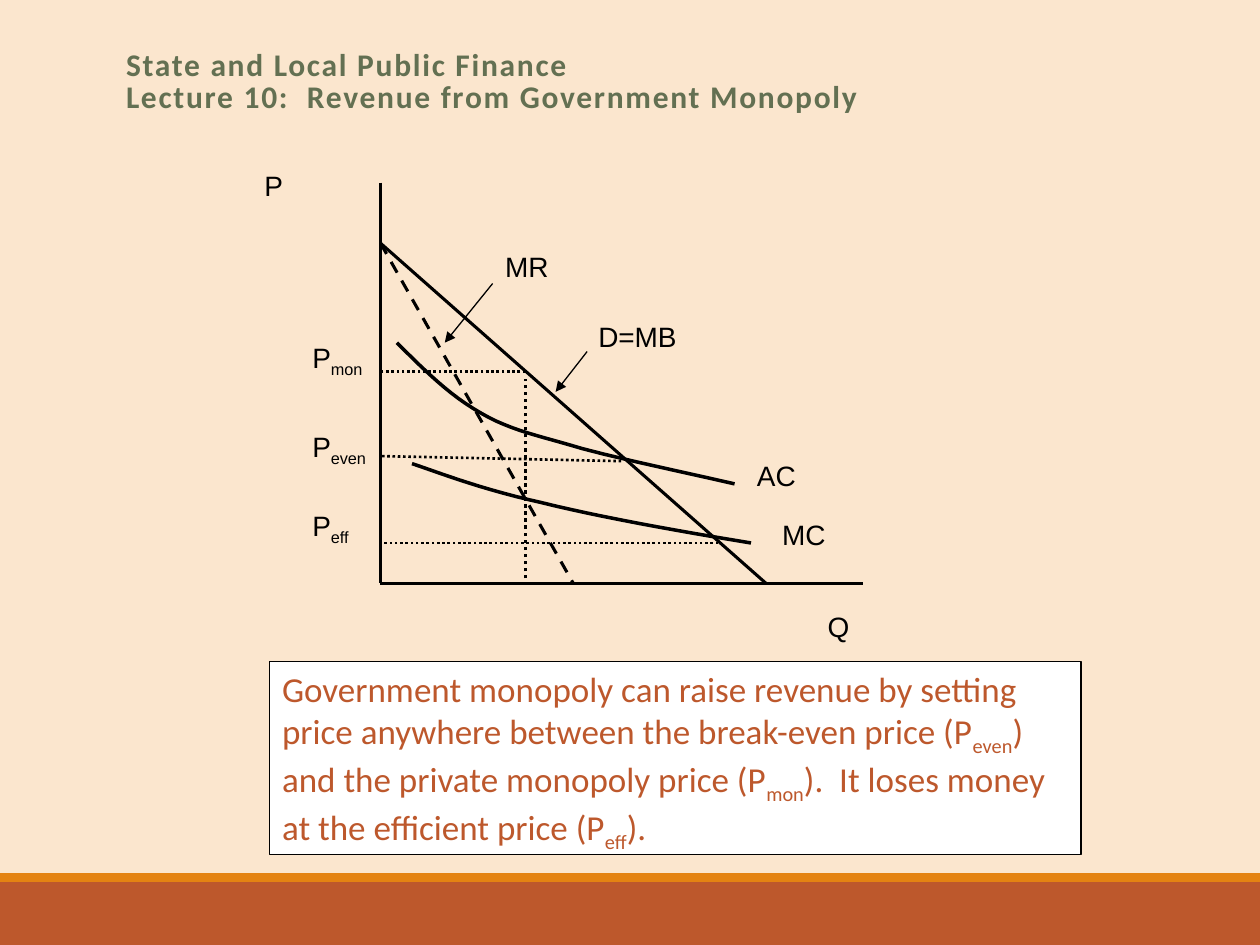
from lxml import etree
from pptx import Presentation
from pptx.dml.color import RGBColor
from pptx.enum.dml import MSO_LINE
from pptx.enum.shapes import MSO_CONNECTOR, MSO_SHAPE
from pptx.enum.text import MSO_ANCHOR, PP_ALIGN
from pptx.oxml.ns import qn
from pptx.util import Inches, Pt

STRAIGHT = MSO_CONNECTOR.STRAIGHT
RECT = MSO_SHAPE.RECTANGLE
DASH, DOT = MSO_LINE.DASH, MSO_LINE.ROUND_DOT
TOP, MIDDLE = MSO_ANCHOR.TOP, MSO_ANCHOR.MIDDLE
LEFT = PP_ALIGN.LEFT
BLACK, RUST = "000000", "BD582C"


def color(value):
    return RGBColor.from_string(value)


def add_rect(s, box, fill, line=None):
    sp = s.shapes.add_shape(RECT, *map(Inches, box))
    sp.shadow.inherit = False
    sp.fill.solid()
    sp.fill.fore_color.rgb = color(fill)
    if line:
        sp.line.color.rgb = color(line)
        sp.line.width = Pt(0.75)
    else:
        sp.line.fill.background()
    return sp


def write(sp, text, font, size, fill):
    tf = sp.text_frame
    tf.word_wrap = True
    tf.vertical_anchor = TOP
    p = tf.paragraphs[0]
    p.alignment = LEFT
    for i, part in enumerate(text.split("|")):
        if not part:
            continue
        r = p.add_run()
        r.text = part
        r.font.name = font
        r.font.size = Pt(size)
        r.font.color.rgb = color(fill)
        if i % 2:
            r._r.get_or_add_rPr().set("baseline", "-25000")


def add_line(s, start, end, width, dash=None, arrow=False):
    sp = s.shapes.add_connector(STRAIGHT, *map(Inches, start + end))
    sp.line.color.rgb = color(BLACK)
    sp.line.width = Pt(width)
    if dash:
        sp.line.dash_style = dash
    if arrow:
        etree.SubElement(sp.line._get_or_add_ln(), qn("a:tailEnd"), type="triangle")
    etree.SubElement(sp._element.spPr, qn("a:effectLst"))


def bezier(points, t):
    weights = ((1 - t) ** 3, 3 * t * (1 - t) ** 2, 3 * t * t * (1 - t), t ** 3)
    return tuple(sum(w * pt[axis] for w, pt in zip(weights, points)) for axis in (0, 1))


def add_curve(s, points, steps=12):
    route = [
        bezier(points[i:i + 4], n / steps)
        for i in range(0, len(points) - 1, 3)
        for n in range(1, steps + 1)
    ]
    builder = s.shapes.build_freeform(*map(Inches, points[0]))
    builder.add_line_segments([(Inches(x), Inches(y)) for x, y in route], close=False)
    sp = builder.convert_to_shape()
    sp.shadow.inherit = False
    sp.fill.background()
    sp.line.color.rgb = color(BLACK)
    sp.line.width = Pt(2)


def add_title(s, box, text):
    sp = s.shapes.title
    sp.left, sp.top, sp.width, sp.height = map(Inches, box)
    tf = sp.text_frame
    tf.text = text
    tf.word_wrap = True
    tf.vertical_anchor = MIDDLE
    p = tf.paragraphs[0]
    p.alignment = LEFT
    p.line_spacing = 0.85
    for r in p.runs:
        r.font.name = "Calibri"
        r.font.size = Pt(18)
        r.font.bold = True
        r.font.color.rgb = color("637052")
        r._r.get_or_add_rPr().set("spc", "100")


def add_footer_bands(s, box):
    x, y, w, h = box
    stripe = 0.07
    add_rect(s, (x, y + stripe, w, h - stripe), RUST)
    add_rect(s, (x, y, w, stripe), "E48312")


def add_monopoly_graph(s, x, y):
    def at(point):
        return x + point[0], y + point[1]

    origin, intercept = (1.02, 3.38), (1.02, 0.68)
    lines = [
        ((1.02, 0.2), origin, 2, None),
        (origin, (4.85, 3.38), 2, None),
        (intercept, (4.08, 3.38), 1.75, None),
        (intercept, (2.55, 3.38), 1.75, DASH),
        ((3.7, 3.06), (1.02, 3.06), 1.5, DOT),
        ((2.93, 2.41), (1.02, 2.37), 1.5, DOT),
        ((2.17, 1.7), (1.02, 1.7), 1.5, DOT),
        ((2.17, 3.34), (2.17, 1.76), 2, DOT),
    ]
    for start, end, width, dash in lines:
        add_line(s, at(start), at(end), width, dash)

    average_cost = [
        (1.15, 1.47), (1.36, 1.68), (1.57, 1.89), (1.82, 2.03), (2.06, 2.17),
        (2.29, 2.21), (2.62, 2.31), (2.96, 2.4), (3.39, 2.49), (3.83, 2.59),
    ]
    marginal_cost = [
        (1.27, 2.43), (1.56, 2.53), (1.85, 2.64), (2.3, 2.74),
        (2.74, 2.85), (3.35, 2.96), (3.96, 3.06),
    ]
    for points in (average_cost, marginal_cost):
        add_curve(s, [at(point) for point in points])

    pointers = [((1.91, 1), (1.53, 1.47)), ((2.66, 1.54), (2.41, 1.86))]
    for start, end in pointers:
        add_line(s, at(start), at(end), 0.75, arrow=True)

    labels = [
        ("P", 0, 0.04, 0.38, 0.64),
        ("Q", 4.47, 3.54, 0.38, 0.64),
        ("AC", 3.91, 2.34, 0.64, 0.48),
        ("MC", 4.11, 2.81, 0.64, 0.48),
        ("MR", 1.91, 0.68, 0.89, 0.48),
        ("D=MB", 2.65, 1.24, 1.28, 0.48),
        ("P|mon|", 0.38, 1.4, 1.02, 0.48),
        ("P|even|", 0.38, 2.11, 1.02, 0.48),
        ("P|eff|", 0.38, 2.74, 1.02, 0.48),
    ]
    for text, left, top, w, h in labels:
        sp = s.shapes.add_textbox(*map(Inches, (*at((left, top)), w, h)))
        write(sp, text, "Arial", 16, BLACK)


def add_conclusion(s, box, text):
    sp = add_rect(s, box, "FFFFFF", BLACK)
    write(sp, text, "Calibri", 20, RUST)


def main():
    prs = Presentation()
    prs.slide_width, prs.slide_height = Inches(10), Inches(7.5)
    s = prs.slides.add_slide(prs.slide_layouts[5])
    s.background.fill.solid()
    s.background.fill.fore_color.rgb = color("FBE6CE")
    add_footer_bands(s, (0, 6.93, 10, 0.57))
    add_title(
        s, (0.9, 0.33, 8.25, 0.65),
        "State and Local Public Finance\vLecture 10:  Revenue from Government Monopoly",
    )
    add_monopoly_graph(s, 2, 1.25)
    add_conclusion(
        s, (2.14, 5.25, 6.44, 1.53),
        "Government monopoly can raise revenue by setting price anywhere between "
        "the break-even price (P|even|) and the private monopoly price (P|mon|).  "
        "It loses money at the efficient price (P|eff|).",
    )
    prs.save("out.pptx")


if __name__ == "__main__":
    main()
